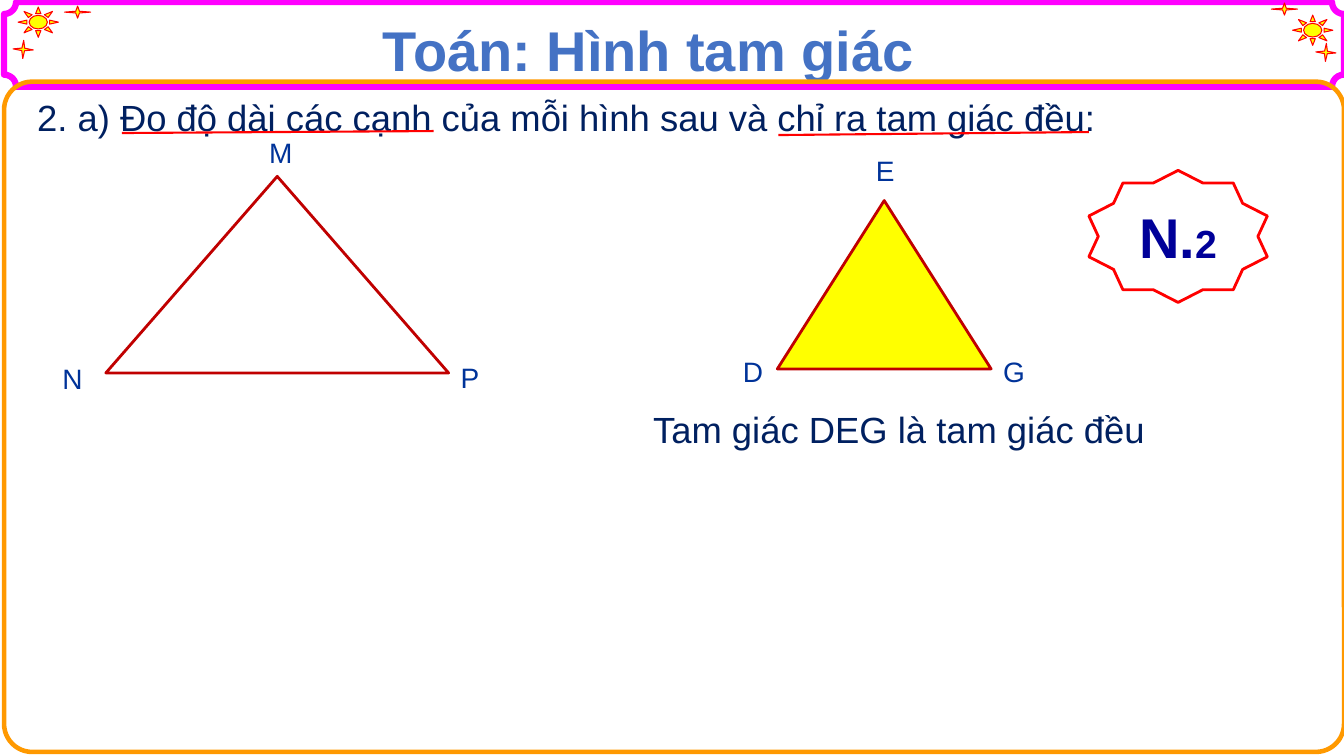
from pptx import Presentation
from pptx.dml.color import RGBColor
from pptx.enum.shapes import MSO_CONNECTOR, MSO_SHAPE
from pptx.enum.text import MSO_ANCHOR, PP_ALIGN
from pptx.oxml.ns import qn
from pptx.util import Inches, Pt

FONT = "Arial"
WHITE = RGBColor(0xFF, 0xFF, 0xFF)
PINK = RGBColor(0xFF, 0x00, 0xFF)
ORANGE = RGBColor(0xFF, 0x99, 0x00)
YELLOW = RGBColor(0xFF, 0xFF, 0x00)
RED = RGBColor(0xFF, 0x00, 0x00)
DARK_RED = RGBColor(0xC0, 0x00, 0x00)
BLUE = RGBColor(0x44, 0x72, 0xC4)
NAVY = RGBColor(0x00, 0x20, 0x60)
LABEL = RGBColor(0x00, 0x33, 0x99)
INDIGO = RGBColor(0x00, 0x00, 0x99)


def style(run, size, color, bold=False):
    font = run.font
    font.name, font.size, font.bold = FONT, Pt(size), bold
    font.color.rgb = color


def add_shape(slide, kind, box, line, width, fill=None, adj=None, turn=0):
    shape = slide.shapes.add_shape(kind, *map(Inches, box))
    shape.shadow.inherit = False
    shape.rotation = turn
    if adj is not None:
        shape.adjustments[0] = adj
    if fill is None:
        shape.fill.background()
    else:
        shape.fill.solid()
        shape.fill.fore_color.rgb = fill
    shape.line.color.rgb = line
    shape.line.width = Pt(width)
    return shape


def add_text(slide, text, box, size, color, space=None):
    frame = slide.shapes.add_textbox(*map(Inches, box)).text_frame
    frame.word_wrap = False
    para = frame.paragraphs[0]
    para.text = text
    para.line_spacing = space
    style(para.runs[0], size, color)


def add_title(slide, text):
    title = slide.shapes.title
    title.left, title.top = Inches(2.93), Inches(0.1)
    title.width, title.height = Inches(7), Inches(0.77)
    frame = title.text_frame
    frame.text = text
    frame.word_wrap = True
    frame.vertical_anchor = MSO_ANCHOR.TOP
    para = frame.paragraphs[0]
    para.alignment = PP_ALIGN.CENTER
    style(para.runs[0], 40, BLUE, True)


def add_line(slide, *ends):
    line = slide.shapes.add_connector(MSO_CONNECTOR.STRAIGHT, *map(Inches, ends))
    line.line.color.rgb = RED
    line.line.width = Pt(1.5)
    props = line._element.spPr
    props.append(props.makeelement(qn("a:effectLst"), {}))


def add_corner(slide, sun, plus, spark):
    add_shape(slide, MSO_SHAPE.STAR_4_POINT, (*plus, 0.12, 0.26), RED, 0.75, YELLOW, 0.1, 270)
    add_shape(slide, MSO_SHAPE.STAR_4_POINT, (*spark, 0.2, 0.18), RED, 0.75, YELLOW, 0.1, 183)
    add_shape(slide, MSO_SHAPE.SUN, (*sun, 0.4, 0.3), RED, 0.75, YELLOW, 0.274)


def add_triangle(slide, box, fill, names):
    add_shape(slide, MSO_SHAPE.ISOSCELES_TRIANGLE, box, DARK_RED, 2, fill)
    for name, spot in names.items():
        add_text(slide, name, (*spot, 0.37, 0.44), 20, LABEL)


def add_badge(slide):
    badge = add_shape(slide, MSO_SHAPE.STAR_10_POINT, (10.8, 1.69, 1.77, 1.31), RED, 2, WHITE)
    badge.text_frame.vertical_anchor = MSO_ANCHOR.MIDDLE
    para = badge.text_frame.paragraphs[0]
    para.alignment = PP_ALIGN.CENTER
    for text, size in (("N.", 40), ("2", 28)):
        run = para.add_run()
        run.text = text
        style(run, size, INDIGO, True)


def main():
    deck = Presentation()
    deck.slide_width, deck.slide_height = Inches(13.33), Inches(7.5)
    slide = deck.slides.add_slide(deck.slide_layouts[5])

    # Frames and corner ornaments
    add_shape(slide, MSO_SHAPE.PLAQUE, (0.04, 0.02, 13.29, 0.84), PINK, 4.5, adj=0.142)
    add_shape(slide, MSO_SHAPE.ROUNDED_RECTANGLE, (0.04, 0.81, 13.29, 6.65), ORANGE, 3.25, adj=0.042)
    add_corner(slide, (12.82, 0.15), (12.68, -0.04), (13.05, 0.43))
    add_corner(slide, (0.18, 0.07), (0.71, -0.01), (0.13, 0.4))

    # Title and question with underlined key words
    add_title(slide, "Toán: Hình tam giác")
    add_text(slide, "2. a) Đo độ dài các cạnh của mỗi hình sau và chỉ ra tam giác đều:",
             (0.27, 0.76, 10.82, 0.67), 26, NAVY, 1.3)
    add_line(slide, 1.21, 1.32, 4.3, 1.3)
    add_line(slide, 7.72, 1.34, 10.8, 1.31)

    # Triangles with their vertices
    add_triangle(slide, (1.05, 1.75, 3.4, 1.95), WHITE,
                 {"M": (2.57, 1.3), "N": (0.52, 3.54), "P": (4.47, 3.53)})
    add_triangle(slide, (7.71, 1.99, 2.12, 1.67), YELLOW,
                 {"E": (8.59, 1.47), "D": (7.27, 3.47), "G": (9.85, 3.47)})

    # Answer and exercise badge
    add_text(slide, "Tam giác DEG là tam giác đều", (6.38, 3.86, 5.17, 0.67), 26, NAVY, 1.3)
    add_badge(slide)

    deck.save("out.pptx")


if __name__ == "__main__":
    main()
